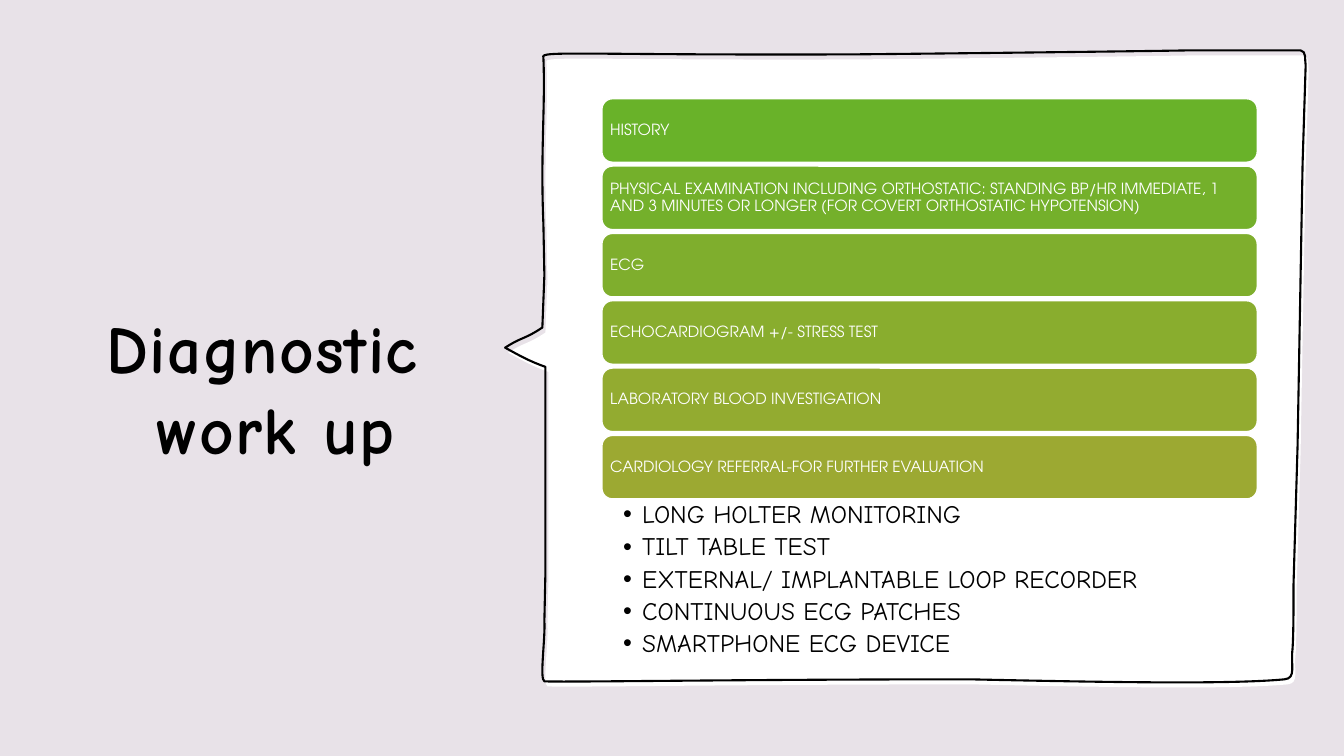
from dataclasses import dataclass

from lxml import etree
from pptx import Presentation
from pptx.dml.color import RGBColor
from pptx.enum.shapes import MSO_SHAPE as SHAPE
from pptx.enum.text import MSO_ANCHOR as ANCHOR, PP_ALIGN as ALIGN
from pptx.oxml.ns import qn
from pptx.util import Inches, Pt


@dataclass(frozen=True)
class Theme:
    background: str = "E8E2E8"
    paper: str = "FFFFFF"
    ink: str = "000000"
    steps: tuple = ("69B229", "74B02B", "7FAE2D", "89AD2E", "93AB30", "9CA932")
    hand_font: str = "Comic Neue"
    step_font: str = "TeX Gyre Adventor"
    bullet_font: str = "Arial"
    title_size: float = 48
    step_size: float = 11
    bullet_size: float = 18


TITLE = ("Diagnostic ", "work up")
STEPS = (
    "HISTORY",
    "PHYSICAL EXAMINATION INCLUDING ORTHOSTATIC: STANDING BP/HR IMMEDIATE, 1 "
    "AND 3 MINUTES OR LONGER (FOR COVERT ORTHOSTATIC HYPOTENSION)",
    "ECG",
    "ECHOCARDIOGRAM +/- STRESS TEST",
    "LABORATORY BLOOD INVESTIGATION",
    "CARDIOLOGY REFERRAL-FOR FURTHER EVALUATION",
)
REFERRAL_TESTS = (
    "LONG HOLTER MONITORING",
    "TILT TABLE TEST",
    "EXTERNAL/ IMPLANTABLE LOOP RECORDER",
    "CONTINUOUS ECG PATCHES",
    "SMARTPHONE ECG DEVICE",
)
# Each entry holds one point (straight line) or three points (Bézier curve).
BUBBLE = (
    ((12.92, 1.62),),
    ((12.95, 0.65),),
    ((12.94, 0.59), (12.96, 0.51), (12.9, 0.5)),
    ((11.8, 0.5),),
    ((11.25, 0.51), (9.53, 0.53), (8.46, 0.54)),
    ((5.77, 0.55), (5.35, 0.5), (5.39, 0.57)),
    ((5.41, 1.07), (5.36, 1.5), (5.39, 2.22)),
    ((5.4, 2.73),),
    ((5.38, 3.25),),
    ((5.2, 3.37), (5.18, 3.34), (5.01, 3.45)),
    ((5.14, 3.52), (5.24, 3.58), (5.41, 3.64)),
    ((5.41, 3.69), (5.41, 5.02), (5.41, 5.21)),
    ((5.41, 5.68),),
    ((5.4, 6.16),),
    ((5.41, 6.34), (5.35, 6.74), (5.4, 6.76)),
    ((5.66, 6.77), (7.34, 6.74), (9.62, 6.74)),
    ((11, 6.77), (12.21, 6.79), (12.74, 6.74)),
    ((12.86, 6.73), (12.8, 6.6), (12.82, 6.44)),
    ((12.83, 6.29), (12.83, 6.01), (12.83, 5.79)),
    ((12.87, 4.43),),
)


class SlideBuilder:
    def __init__(self, slide, theme):
        self.slide, self.theme = slide, theme

    def paint(self, sp, fill=None, line=None, width=1):
        sp.shadow.inherit = False
        for part, color in ((sp.fill, fill), (sp.line.fill, line)):
            if color:
                part.solid()
                part.fore_color.rgb = RGBColor.from_string(color)
            else:
                part.background()
        if line:
            sp.line.width = Pt(width)

    def shape(self, kind, box, fill, line=None):
        sp = self.slide.shapes.add_shape(kind, *map(Inches, box))
        self.paint(sp, fill, line)
        return sp

    def outline(self, segments, dx=0, dy=0, **style):
        """Draw a closed freeform, bending its three-point segments into curves."""
        segments = [[(Inches(x + dx), Inches(y + dy)) for x, y in seg] for seg in segments]
        ends = [seg[-1] for seg in segments]
        builder = self.slide.shapes.build_freeform(*ends[0], scale=1.0)
        builder.add_line_segments(ends[1:], close=True)
        sp = builder.convert_to_shape()
        lines = list(sp._element.iter(qn("a:lnTo")))
        for node, seg in zip(lines, segments[1:]):
            if len(seg) == 3:
                node.clear()
                curve = etree.Element(qn("a:cubicBezTo"))
                for x, y in seg:
                    pt = etree.SubElement(curve, qn("a:pt"))
                    pt.set("x", str(x - sp.left))
                    pt.set("y", str(y - sp.top))
                node.getparent().replace(node, curve)
        self.paint(sp, **style)

    def frame(self, sp, insets, anchor):
        tf = sp.text_frame
        tf.word_wrap = True
        tf.vertical_anchor = anchor
        tf.margin_left, tf.margin_top, tf.margin_right, tf.margin_bottom = map(Inches, insets)
        return tf

    def run(self, p, text, font, size, color, bold=False):
        r = p.add_run()
        r.text = text
        r.font.name, r.font.size, r.font.bold = font, Pt(size), bold
        r.font.color.rgb = RGBColor.from_string(color)
        return r

    def title(self, box, lines):
        sp = self.slide.shapes.add_textbox(*map(Inches, box))
        p = self.frame(sp, (0.1, 0.05, 0.1, 0.05), ANCHOR.MIDDLE).paragraphs[0]
        p.alignment = ALIGN.CENTER
        for i, text in enumerate(lines):
            if i:
                p.add_line_break()
            r = self.run(p, text, self.theme.hand_font, self.theme.title_size,
                         self.theme.ink, bold=True)
            r._r.get_or_add_rPr().set("spc", "100")

    def step(self, box, text, color):
        sp = self.shape(SHAPE.ROUNDED_RECTANGLE, box, color, self.theme.paper)
        p = self.frame(sp, (0.05,) * 4, ANCHOR.MIDDLE).paragraphs[0]
        p.alignment = ALIGN.LEFT
        p.line_spacing = 0.9
        self.run(p, text, self.theme.step_font, self.theme.step_size, self.theme.paper)

    def bullets(self, box, items):
        sp = self.slide.shapes.add_textbox(*map(Inches, box))
        tf = self.frame(sp, (0.21, 0.03, 0.14, 0.03), ANCHOR.TOP)
        for i, text in enumerate(items):
            p = tf.add_paragraph() if i else tf.paragraphs[0]
            p.level = 1
            p.line_spacing = 0.9
            p.space_after = Pt(3.6)
            pPr = p._p.get_or_add_pPr()
            pPr.set("marL", str(Inches(0.19)))
            pPr.set("indent", str(-Inches(0.19)))
            etree.SubElement(pPr, qn("a:buFont")).set("typeface", self.theme.bullet_font)
            etree.SubElement(pPr, qn("a:buChar")).set("char", "•")
            self.run(p, text, self.theme.hand_font, self.theme.bullet_size, self.theme.ink)


def main():
    prs = Presentation()
    prs.slide_width, prs.slide_height = Inches(13.33), Inches(7.5)
    theme = Theme()
    s = SlideBuilder(prs.slides.add_slide(prs.slide_layouts[6]), theme)

    s.shape(SHAPE.RECTANGLE, (0, 0, 13.33, 7.5), theme.background)
    s.title((0.79, 1.75, 3.89, 4.18), TITLE)

    s.outline(BUBBLE, dx=0.03, dy=0.05, fill=theme.paper)
    s.outline(BUBBLE, line=theme.ink, width=1.5)

    left, width, height = 5.97, 6.5, 0.63
    first_top, last_top = 0.98, 4.32
    pitch = (last_top - first_top) / (len(STEPS) - 1)
    for i, (text, color) in enumerate(zip(STEPS, theme.steps)):
        s.step((left, first_top + i * pitch, width, height), text, color)
    s.bullets((left, 4.95, width, 1.64), REFERRAL_TESTS)

    prs.save("out.pptx")


if __name__ == "__main__":
    main()
